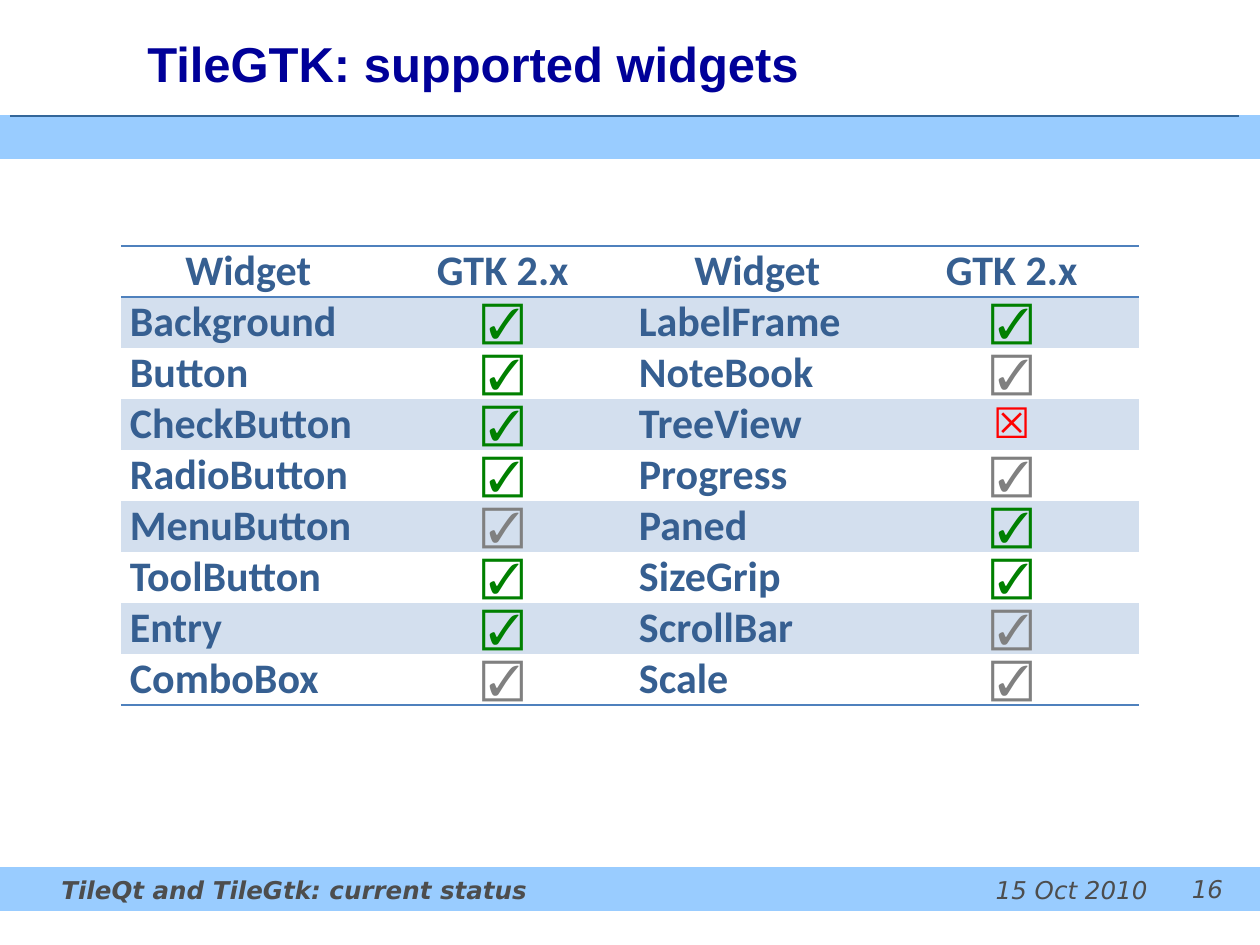
from lxml import etree
from pptx import Presentation
from pptx import util as u
from pptx.dml.color import RGBColor
from pptx.enum import shapes, text
from pptx.oxml import ns

PX = 914400 // 126
LEFT, CENTER, RIGHT = text.PP_ALIGN.LEFT, text.PP_ALIGN.CENTER, text.PP_ALIGN.RIGHT

# Content
HEADINGS = ["Widget", "GTK 2.x"] * 2
FULL, PARTIAL, MISSING = ("☑", "008000"), ("☑", "808080"), ("☒", "FF0000")
WIDGETS = [
    ("Background", FULL, "LabelFrame", FULL),
    ("Button", FULL, "NoteBook", PARTIAL),
    ("CheckButton", FULL, "TreeView", MISSING),
    ("RadioButton", FULL, "Progress", PARTIAL),
    ("MenuButton", PARTIAL, "Paned", FULL),
    ("ToolButton", FULL, "SizeGrip", FULL),
    ("Entry", FULL, "ScrollBar", PARTIAL),
    ("ComboBox", PARTIAL, "Scale", PARTIAL),
]
BAND_TOPS = [868, 116]
BAND_HEIGHT = 42
FOOTER = dict(size=14, font="DejaVu Sans", color="4D4D4D", italic=True)
TEXTS = [  # words, box in px, alignment, style
    ("15 Oct 2010", (977, 869, 183, 42), RIGHT, FOOTER),
    ("TileQt and TileGtk: current status", (49, 869, 950, 42), LEFT, dict(FOOTER, bold=True)),
    ("16", (1176, 868, 63, 42), CENTER, FOOTER),
    ("TileGTK: supported widgets", (135, 10, 1125, 105), LEFT,
     dict(size=28, font="Arial", color="000099", bold=True)),
]
TABLE_LEFT, TABLE_TOP, TABLE_WIDTH, ROW_HEIGHT = 121, 246, 1018, 51


def px(value):
    return u.Emu(value * PX)


def rgb(value):
    return RGBColor.from_string(value)


def write(frame, words, align, size, font, color, bold=False, italic=False):
    paragraph = frame.paragraphs[0]
    paragraph.alignment = align
    run = paragraph.add_run()
    run.text = words
    run.font.size, run.font.name = u.Pt(size), font
    run.font.bold, run.font.italic = bold, italic
    run.font.color.rgb = rgb(color)


def set_borders(cell, ruled_sides):
    properties = cell._tc.get_or_add_tcPr()
    for side in "LRTB":
        line = etree.SubElement(properties, ns.qn(f"a:ln{side}"), w=str(u.Pt(1)))
        if side in ruled_sides:
            fill = etree.SubElement(line, ns.qn("a:solidFill"))
            etree.SubElement(fill, ns.qn("a:srgbClr"), val="4F81BD")
        else:
            etree.SubElement(line, ns.qn("a:noFill"))


presentation = Presentation()
presentation.slide_width, presentation.slide_height = px(1260), px(945)
slide = presentation.slides.add_slide(presentation.slide_layouts[6])

# Bands and title rule
for top in BAND_TOPS:
    band = slide.shapes.add_shape(shapes.MSO_SHAPE.RECTANGLE, 0, px(top), px(1260), px(BAND_HEIGHT))
    band.shadow.inherit = False
    band.fill.solid()
    band.fill.fore_color.rgb = band.line.color.rgb = rgb("99CCFF")
    band.line.width = u.Pt(0.75)
rule = slide.shapes.add_connector(shapes.MSO_CONNECTOR.STRAIGHT, px(1239), px(116), px(10), px(116))
rule.line.color.rgb, rule.line.width = rgb("336699"), u.Pt(0.75)
etree.SubElement(rule._element.spPr, ns.qn("a:effectLst"))

# Title and footer
for words, box, align, style in TEXTS:
    frame = slide.shapes.add_textbox(*map(px, box)).text_frame
    frame.word_wrap = True
    frame.vertical_anchor = text.MSO_ANCHOR.MIDDLE
    write(frame, words, align, **style)

# Widget table
rows = [HEADINGS, *WIDGETS]
table = slide.shapes.add_table(len(rows), len(HEADINGS), px(TABLE_LEFT), px(TABLE_TOP),
                               px(TABLE_WIDTH), px(ROW_HEIGHT * len(rows))).table
table.first_row = table.horz_banding = False
for row_index, row in enumerate(rows):
    is_heading = row_index == 0
    ruled_sides = {0: "TB", 1: "T", len(rows) - 1: "B"}.get(row_index, "")
    for column_index, value in enumerate(row):
        is_name = isinstance(value, str)
        words, color = (value, "365F91") if is_name else value
        cell = table.cell(row_index, column_index)
        cell.vertical_anchor = text.MSO_ANCHOR.MIDDLE
        cell.margin_left = cell.margin_right = px(9)
        cell.margin_top = cell.margin_bottom = 0
        set_borders(cell, ruled_sides)
        if row_index % 2:
            cell.fill.solid()
            cell.fill.fore_color.rgb = rgb("D3DFEE")
        else:
            cell.fill.background()
        write(cell.text_frame, words, LEFT if is_name and not is_heading else CENTER,
              24, "Calibri", color, bold=is_name)

presentation.save("out.pptx")
